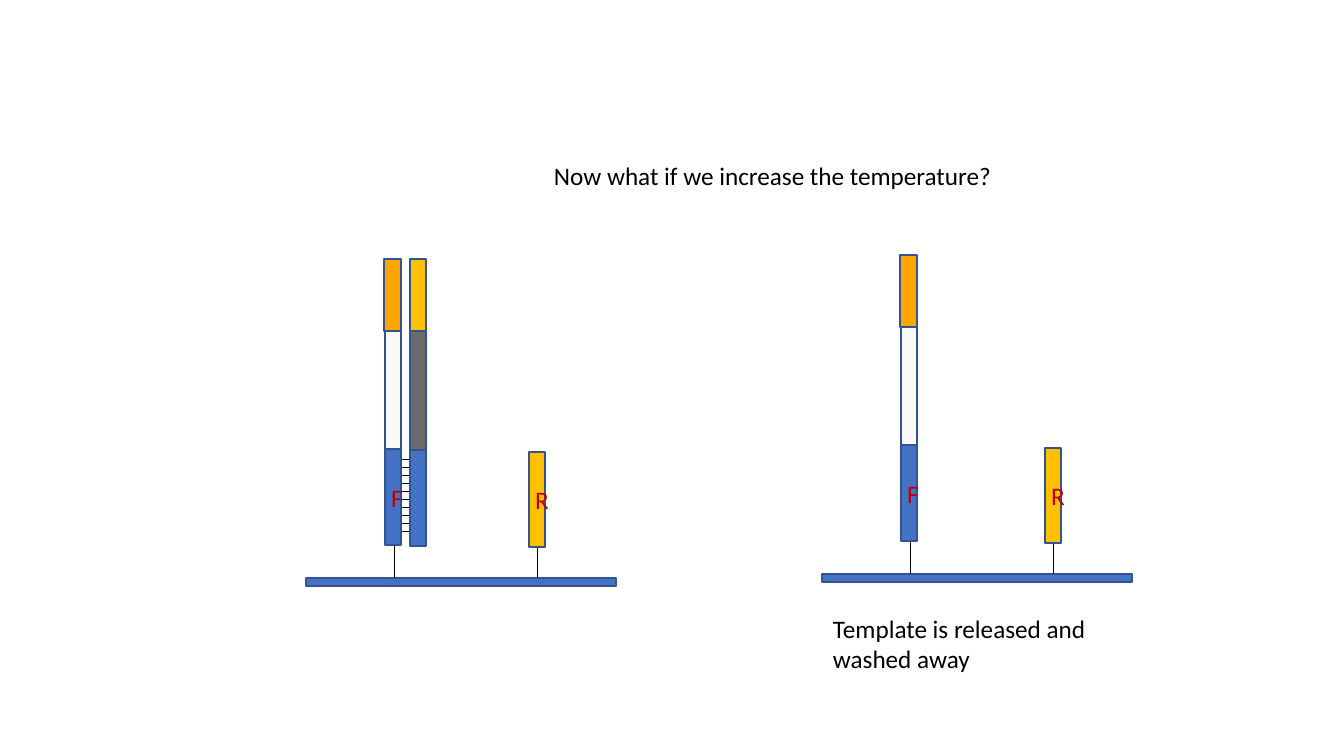
from lxml.etree import SubElement
from pptx import Presentation
from pptx.dml.color import RGBColor
from pptx.enum.shapes import MSO_CONNECTOR, MSO_SHAPE
from pptx.enum.text import MSO_ANCHOR, MSO_AUTO_SIZE, PP_ALIGN
from pptx.oxml.ns import qn
from pptx.util import Emu, Pt

SCALE = 914400 / 100.8
BLUE, GOLD, AMBER = "4472C4", "FFC000", "FFA600"
GRAY, PALE, EDGE = "6B6B6B", "FAFAFA", "325491"
RED, BLACK = "C00000", "000000"


def px(*nums):
    return [Emu(round(num * SCALE)) for num in nums]


def paint(color, tone):
    color.rgb = RGBColor.from_string(tone)


def write(frame, text, tone=BLACK, size=18, align=PP_ALIGN.LEFT,
          anchor=MSO_ANCHOR.TOP, wrap=True):
    frame.word_wrap = wrap
    frame.vertical_anchor = anchor
    para = frame.paragraphs[0]
    para.alignment = align
    run = para.add_run()
    run.text = text
    run.font.name = "Calibri"
    run.font.size = Pt(size)
    paint(run.font.color, tone)


def bar(group, x, y, w, h, tone, text=None):
    shape = group.shapes.add_shape(MSO_SHAPE.RECTANGLE, *px(x, y, w, h))
    shape.shadow.inherit = False
    shape.fill.solid()
    paint(shape.fill.fore_color, tone)
    paint(shape.line.color, EDGE)
    shape.line.width = Pt(1)
    if text:
        write(shape.text_frame, text, tone=RED, align=PP_ALIGN.CENTER,
              anchor=MSO_ANCHOR.MIDDLE)


def rule(group, x1, y1, x2, y2):
    line = group.shapes.add_connector(MSO_CONNECTOR.STRAIGHT, *px(x1, y1, x2, y2))
    paint(line.line.color, BLACK)
    line.line.width = Pt(0.5)
    SubElement(line._element.spPr, qn("a:effectLst"))


def label(slide, x, y, w, h, text, wrap=True):
    box = slide.shapes.add_textbox(*px(x, y, w, h))
    write(box.text_frame, text, wrap=wrap)
    box.text_frame.auto_size = MSO_AUTO_SIZE.SHAPE_TO_FIT_TEXT


def rungs(group, x, y):
    for step in range(10):
        level = y + 200 + 8 * step
        rule(group, x + 89, level, x + 105, level)


def strand(group, x, y):
    bar(group, x + 104, y + 72, 16, 215, BLUE)
    bar(group, x + 104, y + 72, 16, 119, GRAY)
    bar(group, x + 104, y, 16, 72, GOLD)


def flow_cell(slide, x, y, bound):
    group = slide.shapes.add_group_shape()
    if bound:
        rungs(group, x, y)
    bar(group, x, y + 319, 310, 8, BLUE)
    rule(group, x + 88, y + 319, x + 88, y + 280)
    bar(group, x + 79, y + 190, 16, 96, BLUE, "F")
    rule(group, x + 231, y + 319, x + 231, y + 280)
    bar(group, x + 223, y + 193, 16, 95, GOLD, "R")
    if bound:
        strand(group, x, y)
    bar(group, x + 79, y + 72, 16, 118, PALE)
    bar(group, x + 78, y, 17, 72, AMBER)


def main():
    deck = Presentation()
    deck.slide_width, deck.slide_height = px(1344, 756)
    slide = deck.slides.add_slide(deck.slide_layouts[6])
    label(slide, 544, 155, 463, 40,
          "Now what if we increase the temperature?", wrap=False)
    flow_cell(slide, 306, 259, bound=True)
    flow_cell(slide, 822, 255, bound=False)
    label(slide, 823, 608, 286, 72, "Template is released and washed away")
    deck.save("out.pptx")


if __name__ == "__main__":
    main()
